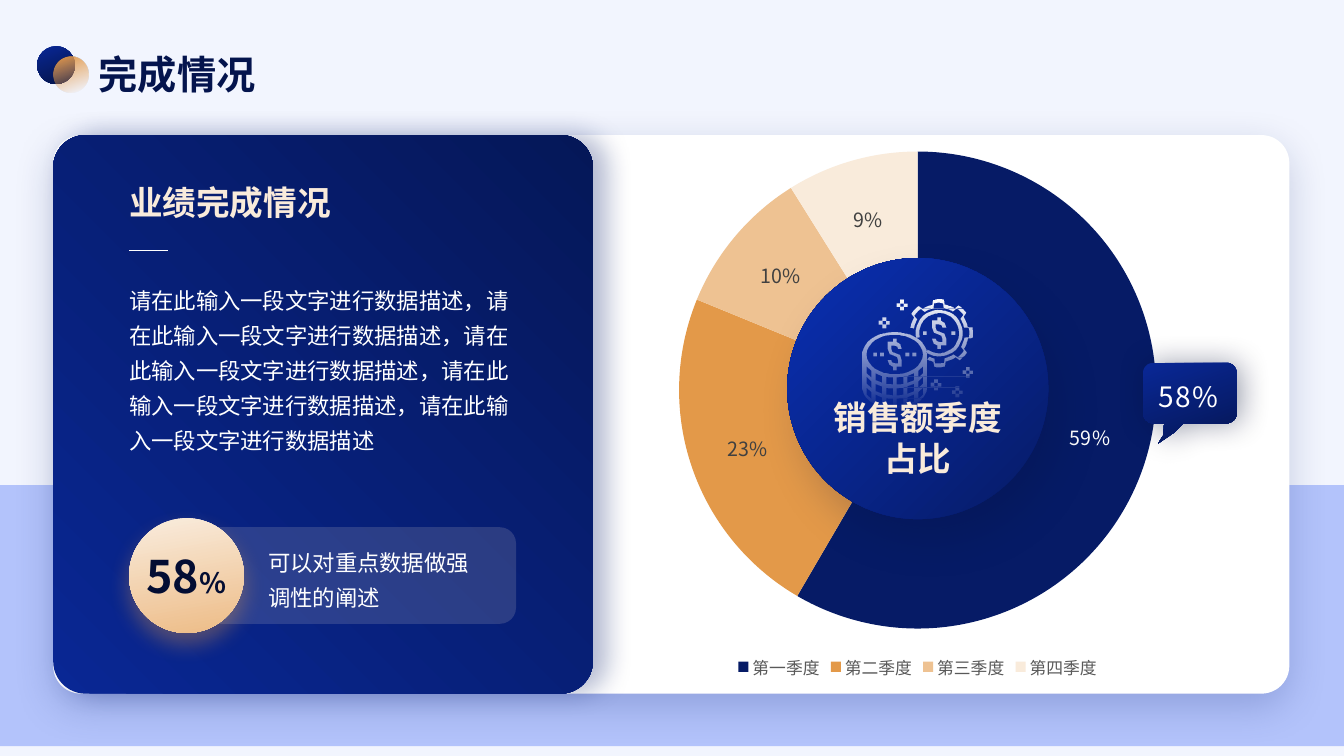
"""Build the sales completion slide with a quarterly doughnut chart."""
from math import cos, pi, radians, sin, sqrt

from lxml.etree import SubElement
from pptx import Presentation
from pptx.chart.data import CategoryChartData
from pptx.dml.color import RGBColor
from pptx.enum.chart import XL_CHART_TYPE as ChartType, XL_LEGEND_POSITION as LegendPosition
from pptx.enum.shapes import MSO_CONNECTOR as Connector, MSO_SHAPE as Preset
from pptx.enum.text import MSO_ANCHOR as Anchor, PP_ALIGN as Align
from pptx.oxml import parse_xml
from pptx.oxml.ns import nsdecls, qn
from pptx.util import Pt

FONT = "Noto Sans CJK SC"
COLORS = {
    "periwinkle": "B3C3FB", "white": "FFFFFF", "royal": "092794", "midnight": "041346",
    "panel": "051758", "navy": "061B66", "bright": "0A2FB2", "ink": "030D33",
    "title": "04144D", "orange": "E39949", "peach": "EEC292", "apricot": "EDBC87",
    "cream": "F9EBDB", "label": "404040", "legend": "595959",
}
QUARTERS = {
    "第一季度": (59, "navy"), "第二季度": (23, "orange"),
    "第三季度": (10, "peach"), "第四季度": (9, "cream"),
}
DOLLAR_HALF = [
    (-1.2, -11.2), (1.2, -11.2), (1.2, -8.8), (3.8, -7.4), (5, -4), (2.5, -4),
    (2, -5.6), (0, -6.2), (-2.5, -6.2), (-2.5, -4), (-1.8, -2), (0, -1.2),
    (3.6, 0.3), (5, 4), (5, 8.8), (1.2, 8.8),
]


def rgb(name):
    return RGBColor.from_string(COLORS[name])


def color_xml(name, alpha=100):
    return (f'<a:srgbClr val="{COLORS[name]}">'
            f'<a:alpha val="{alpha * 1000}"/></a:srgbClr>')


def paint(shape, xml):
    """Replace the fill of a shape by a fill element and drop its outline."""
    shape.fill.background()
    properties = shape.element.spPr
    properties.replace(properties.find(qn("a:noFill")), parse_xml(xml))
    shape.line.fill.background()
    shape.shadow.inherit = False


def solid(name, alpha=100):
    return f'<a:solidFill {nsdecls("a")}>{color_xml(name, alpha)}</a:solidFill>'


def gradient(stops, angle=None):
    """Return a linear gradient, or a circular one from the top left without an angle."""
    marks = "".join(f'<a:gs pos="{position * 1000}">{color_xml(*color)}</a:gs>'
                    for position, *color in stops)
    if angle is None:
        way = '<a:path path="circle"><a:fillToRect r="100000" b="100000"/></a:path>'
    else:
        way = f'<a:lin ang="{angle * 60000}" scaled="0"/>'
    return f'<a:gradFill {nsdecls("a")} rotWithShape="1"><a:gsLst>{marks}</a:gsLst>{way}</a:gradFill>'


def cast_shadow(shape, name, alpha, blur, distance, angle):
    effects = shape.element.spPr.find(qn("a:effectLst"))
    effects.append(parse_xml(
        f'<a:outerShdw {nsdecls("a")} blurRad="{Pt(blur)}" dist="{Pt(distance)}" '
        f'dir="{angle * 60000}" algn="ctr" rotWithShape="0">{color_xml(name, alpha)}</a:outerShdw>'))


def add_block(slide, preset, box, fill, shadow=None, corner=None):
    shape = slide.shapes.add_shape(preset, *map(Pt, box))
    if corner is not None:
        shape.adjustments[0] = corner
    paint(shape, fill)
    if shadow:
        cast_shadow(shape, *shadow)
    return shape


def clear_margins(frame):
    frame.margin_left = frame.margin_top = frame.margin_right = frame.margin_bottom = 0


def add_text(slide, box, text, size, color="white", bold=False, spacing=None, align=Align.LEFT, wrap=True):
    frame = slide.shapes.add_textbox(*map(Pt, box)).text_frame
    clear_margins(frame)
    frame.word_wrap = wrap
    paragraph = frame.paragraphs[0]
    paragraph.text = text
    paragraph.alignment = align
    if spacing:
        paragraph.line_spacing = spacing
    font = paragraph.font
    font.name, font.size, font.bold = FONT, Pt(size), bold
    font.color.rgb = rgb(color)
    return paragraph


def add_outline(slide, contours, fill):
    """Add one freeform from closed contours given in points."""
    scaled = [[(x * 100, y * 100) for x, y in contour] for contour in contours]
    builder = slide.shapes.build_freeform(*scaled[0][0], scale=Pt(1) / 100)
    for index, contour in enumerate(scaled):
        if index:
            builder.move_to(*contour[0])
        builder.add_line_segments(contour[1:], close=True)
    shape = builder.convert_to_shape()
    paint(shape, fill)
    return shape


def arc(x, y, width, height, start, end, steps=32):
    angles = [radians(start + (end - start) * step / steps) for step in range(steps + 1)]
    return [(x + width * cos(angle), y + height * sin(angle)) for angle in angles]


def square(x, y, size=2.5):
    half = size / 2
    return [(x - half, y - half), (x + half, y - half), (x + half, y + half), (x - half, y + half)]


def gear_edge(x, y, root, tip, start, end):
    """Trace an eight-tooth gear edge between two angles."""
    def radius(angle):
        return tip if cos(radians(angle * 8)) > 0.15 else root
    return [(x + radius(angle) * cos(radians(angle)), y + radius(angle) * sin(radians(angle)))
            for angle in range(start, end + 1, 3)]


def dollar(x, y):
    sign = DOLLAR_HALF + [(-dx, -dy) for dx, dy in DOLLAR_HALF]
    return [(x + dx, y + dy) for dx, dy in sign]


def coin_panels(x, y):
    """Return the openings in the rim of the three stacked coins."""
    def rim(at):
        return y + 16 * sqrt(1 - ((at - x) / 23) ** 2)
    panels = []
    for band in range(3):
        top = 0.5 + 7.6 * band
        for left, right in [(-20.2, -16.6), (-13.7, -8.7), (-6.2, -1.2), (1.2, 6.2), (8.7, 13.7), (16.6, 20.2)]:
            panels.append([(x + left, rim(x + left) + top), (x + right, rim(x + right) + top),
                           (x + right, rim(x + right) + top + 5), (x + left, rim(x + left) + top + 5)])
    return panels


def add_coin_icon(slide, left, top):
    coin, gear = (left + 22.9, top + 39.2), (left + 54.4, top + 24)
    contours = [
        gear_edge(*gear, 20.8, 24.1, 191, 473) + gear_edge(*gear, 18.3, 21.6, 191, 473)[::-1],
        arc(*gear, 16.6, 16.6, 168, 484) + arc(*gear, 14.2, 14.2, 484, 168),
        arc(*coin, 23, 16, 180, 360) + arc(coin[0], coin[1] + 23, 23, 16, 0, 180),
        arc(*coin, 20.2, 14, 0, 360),
        dollar(*coin), dollar(*gear),
    ]
    contours += coin_panels(*coin)
    contours += [square(coin[0] + offset, coin[1]) for offset in (-13.9, -8.9, 8.9, 13.9)]
    contours += [square(gear[0] + offset, gear[1]) for offset in (-10, 10)]
    for x, y in [(28.1, 4), (15.5, 16.6), (52.2, 60.8), (67.3, 65.9), (74.9, 51.8)]:
        contours += [square(left + x + 2.5 * dx, top + y + 2.5 * dy)
                     for dx, dy in [(0, -1), (1, 0), (0, 1), (-1, 0)]]
    add_outline(slide, contours, gradient([(0, "white"), (100, "white", 0)], 90))


def add_callout(slide):
    corners = [(823.7, 266.4, 180), (876.2, 266.4, 270), (876.2, 295.2, 0), (823.7, 295.2, 90)]
    arcs = [arc(x, y, 7.2, 7.2, start, start + 90, 8) for x, y, start in corners]
    tail = [(845.3, 302.4), (838.8, 308.9), (827.3, 316.8), (831, 311), (831.6, 302.4)]
    callout = add_outline(slide, [arcs[0] + arcs[1] + arcs[2] + tail + arcs[3]],
                          gradient([(4, "royal"), (95, "panel")], 70))
    cast_shadow(callout, "ink", 40, 22, 3, 0)
    paragraph = add_text(slide, (827.3, 263.5, 49, 29.5), "58%", 20, spacing=1.3, wrap=False)
    paragraph.runs[0].font.language_id = None
    paragraph.runs[0].font._element.set("spc", "100")


def add_quarter_chart(slide):
    data = CategoryChartData(number_format='0"%"')
    data.categories = list(QUARTERS)
    data.add_series("Series 1", [value for value, _ in QUARTERS.values()])
    chart = slide.shapes.add_chart(ChartType.DOUGHNUT, Pt(361.4), Pt(96.5), Pt(588.2), Pt(391.7), data).chart
    chart.has_title = False
    chart.font.name, chart.font.size = "Arial", Pt(10)
    chart.has_legend = True
    legend = chart.legend
    legend.position, legend.include_in_layout = LegendPosition.BOTTOM, False
    legend.font.name, legend.font.size = "Arial", Pt(12)
    legend.font.color.rgb = rgb("legend")
    plot = chart.plots[0]
    plot.vary_by_categories = True
    plot._element.find(qn("c:holeSize")).set("val", "75")
    series = plot.series[0]
    for index, (_, color) in enumerate(QUARTERS.values()):
        point = series.points[index].format
        point.fill.solid()
        point.fill.fore_color.rgb = rgb(color)
        point.line.fill.background()
    labels = series.data_labels
    labels.show_value = True
    for font, color in [(labels.font, "label"), (series.points[0].data_label.font, "white")]:
        font.name, font.size = FONT, Pt(14)
        font.color.rgb = rgb(color)
    area = chart._chartSpace.chart.plotArea
    for old in area.findall(qn("c:layout")):
        area.remove(old)
    layout = parse_xml(f'<c:layout {nsdecls("c")}><c:manualLayout/></c:layout>')
    for tag, value in [("layoutTarget", "inner"), ("xMode", "edge"), ("yMode", "edge"),
                       ("x", "0.21"), ("y", "0.03"), ("w", "0.58"), ("h", "0.87")]:
        SubElement(layout[0], qn(f"c:{tag}")).set("val", value)
    area.insert(0, layout)


def add_badge(slide):
    badge = add_block(slide, Preset.OVAL, (92.2, 370.1, 82, 82),
                      gradient([(3, "cream"), (100, "apricot")], 80), ("orange", 36, 16, 8, 90))
    frame = badge.text_frame
    clear_margins(frame)
    frame.vertical_anchor, frame.word_wrap = Anchor.MIDDLE, False
    paragraph = frame.paragraphs[0]
    paragraph.alignment = Align.CENTER
    for text, size in [("58", 32), ("%", 20)]:
        run = paragraph.add_run()
        run.text = text
        run.font.name, run.font.size, run.font.bold = FONT, Pt(size), True
        run.font.color.rgb = rgb("ink")


def add_rule(slide):
    rule = slide.shapes.add_connector(Connector.STRAIGHT, Pt(92.2), Pt(179), Pt(120), Pt(179))
    rule.line.color.rgb, rule.line.width = rgb("white"), Pt(1)
    SubElement(rule.element.spPr, qn("a:effectLst"))


def main():
    presentation = Presentation()
    presentation.slide_width, presentation.slide_height = Pt(960), Pt(540)
    slide = presentation.slides.add_slide(presentation.slide_layouts[6])
    add_block(slide, Preset.RECTANGLE, (0, 0, 960, 540), solid("periwinkle", 16))
    add_block(slide, Preset.RECTANGLE, (0, 346.5, 960, 186.5), solid("periwinkle"))
    add_block(slide, Preset.ROUNDED_RECTANGLE, (38, 96.5, 883, 399), solid("white"),
              ("navy", 20, 30, 10, 90), 0.05)
    add_block(slide, Preset.ROUNDED_RECTANGLE, (38, 96.5, 385.5, 399),
              gradient([(0, "royal"), (100, "panel")], 315), ("navy", 30, 18, 10, 0), 0.06)
    add_block(slide, Preset.OVAL, (26.5, 33, 27, 27), gradient([(4, "royal"), (100, "midnight")], 70))
    add_block(slide, Preset.OVAL, (38.2, 40.8, 25.2, 25.2),
              gradient([(4, "orange"), (95, "orange", 0)], 70))
    add_quarter_chart(slide)
    add_block(slide, Preset.OVAL, (562.3, 184.3, 186.5, 186.5),
              gradient([(0, "bright"), (100, "navy")]), ("ink", 19, 30, 18, 60))
    add_text(slide, (92.2, 199.4, 272.2, 124.6), "，".join(["请在此输入一段文字进行数据描述"] * 5), 16, spacing=1.3)
    add_text(slide, (92.2, 129.6, 147.6, 28.8), "业绩完成情况", 24, "cream", True)
    add_rule(slide)
    add_block(slide, Preset.ROUNDED_RECTANGLE, (120.2, 376.6, 248.4, 69), solid("cream", 15))
    add_badge(slide)
    add_text(slide, (191.5, 386.6, 151.2, 49), "可以对重点数据做强调性的阐述", 16, spacing=1.3)
    add_callout(slide)
    add_coin_icon(slide, 616.3, 213.8)
    add_text(slide, (586.8, 283.7, 137.5, 58.3), "销售额季度占比", 24, "cream", True, align=Align.CENTER)
    add_text(slide, (70.6, 39.6, 370, 29.5), "完成情况", 28, "title", True, 0.9)
    presentation.save("out.pptx")


if __name__ == "__main__":
    main()
